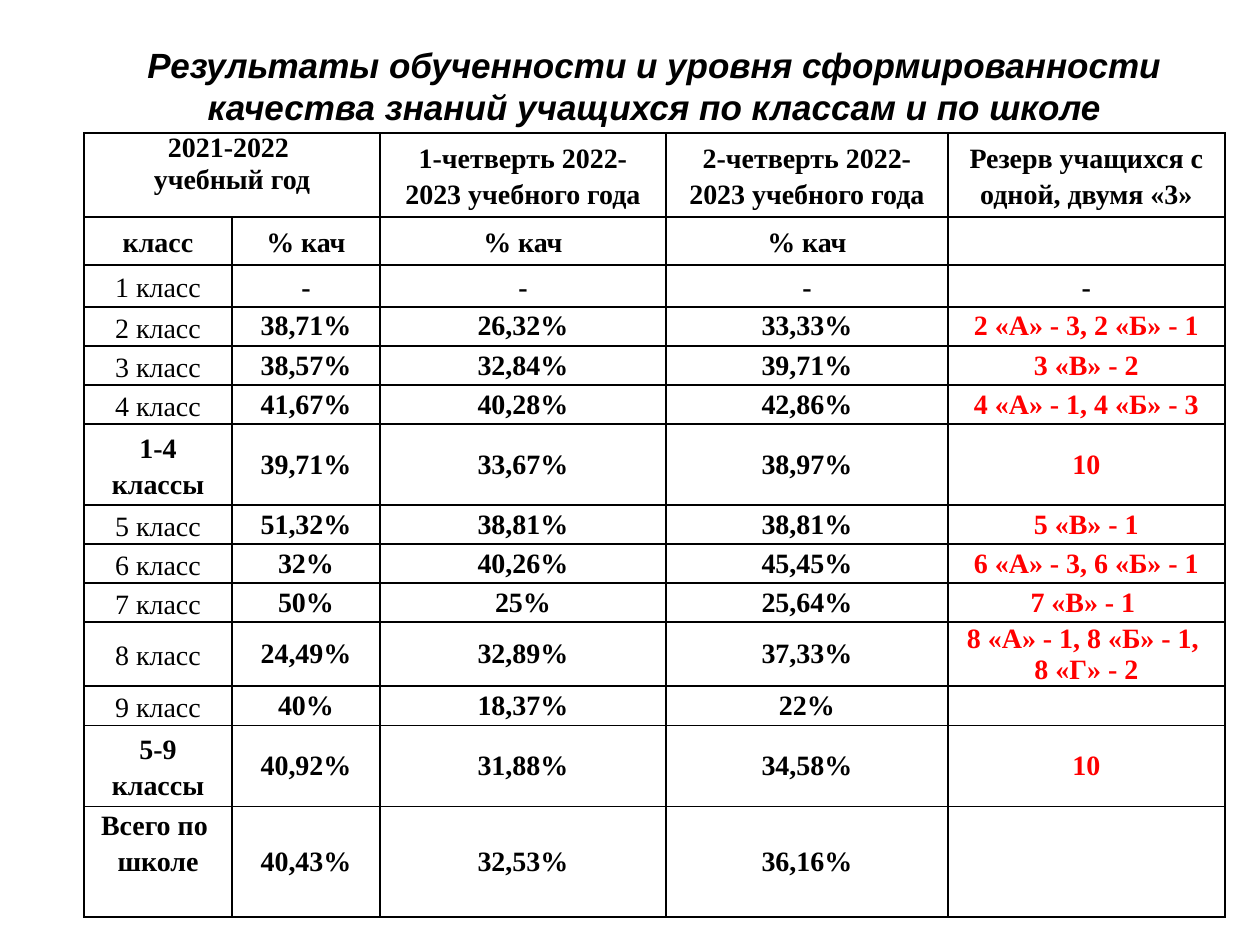
"""Build the slide with quarterly knowledge-quality results by class."""
import pptx
import pptx.util
import pptx.dml.color
import pptx.enum.text
import lxml.etree

TITLE = ("Результаты обученности и уровня сформированности "
         "качества знаний учащихся по классам и по школе")
RESULTS = [
    (84, ["2021-2022 \nучебный год", "", "1-четверть 2022-2023 учебного года",
          "2-четверть 2022-2023 учебного года", "Резерв учащихся с одной, двумя «3»"]),
    (48, ["класс", "% кач", "% кач", "% кач", ""]),
    (42, ["1 класс", "-", "-", "-", "-"]),
    (39, ["2 класс", "38,71%", "26,32%", "33,33%", "2 «А» - 3, 2 «Б» - 1"]),
    (39, ["3 класс", "38,57%", "32,84%", "39,71%", "3 «В» - 2"]),
    (39, ["4 класс", "41,67%", "40,28%", "42,86%", "4 «А» - 1, 4 «Б» - 3"]),
    (81, ["1-4 классы", "39,71%", "33,67%", "38,97%", "10"]),
    (39, ["5 класс", "51,32%", "38,81%", "38,81%", "5 «В» - 1"]),
    (39, ["6 класс", "32%", "40,26%", "45,45%", "6 «А» - 3, 6 «Б» - 1"]),
    (39, ["7 класс", "50%", "25%", "25,64%", "7 «В» - 1 "]),
    (64, ["8 класс", "24,49%", "32,89%", "37,33%", "8 «A» - 1, 8 «Б» - 1, \v8 «Г» - 2"]),
    (39, ["9 класс", "40%", "18,37%", "22%", ""]),
    (81, ["5-9 классы", "40,92%", "31,88%", "34,58%", "10"]),
    (111, ["Всего по \nшколе", "40,43%", "32,53%", "36,16%", ""]),
]
COLUMNS = [148, 148, 286, 282, 277]
LEFT, TITLE_TOP, TABLE_TOP, TITLE_HEIGHT = 84, 37, 133, 97
WIDTH = sum(COLUMNS)
BLACK, RED = "000000", "FF0000"
TITLE_FONT = {"name": "Arial", "size": pptx.util.Pt(20), "bold": True, "italic": True}
CELL_FONT = {"name": "Times New Roman", "size": pptx.util.Pt(16)}
ANCHOR = pptx.enum.text.MSO_ANCHOR
CENTER = pptx.enum.text.PP_ALIGN.CENTER


def px(length):
    return pptx.util.Emu(round(length * 914400 / 126))


def rgb(value):
    return pptx.dml.color.RGBColor.from_string(value)


def assign(target, values):
    for key, value in values.items():
        setattr(target, key, value)


def write(frame, text, font, color=BLACK, spacing=None):
    frame.text = text
    for paragraph in frame.paragraphs:
        assign(paragraph, {"alignment": CENTER, "line_spacing": spacing})
        for run in paragraph.runs:
            assign(run.font, font)
            run.font.color.rgb = rgb(color)


def outline(cell):
    properties = cell._tc.get_or_add_tcPr()
    namespace = "{http://schemas.openxmlformats.org/drawingml/2006/main}"
    for side in ("lnL", "lnR", "lnT", "lnB"):
        line = lxml.etree.SubElement(properties, namespace + side, w="12700")
        fill = lxml.etree.SubElement(line, namespace + "solidFill")
        lxml.etree.SubElement(fill, namespace + "srgbClr", val=BLACK)


def cell_margins(row, column):
    if row == 0 and column > 1:
        sides = (13, 6, 13, 6)
    elif row > 3 and column > 0:
        sides = (1, 1, 1, 0)
    else:
        sides = (9, 0, 9, 0)
    names = ("margin_left", "margin_top", "margin_right", "margin_bottom")
    return {name: px(side) for name, side in zip(names, sides)}


def add_results(slide):
    height = sum(row_height for row_height, _ in RESULTS)
    results = slide.shapes.add_table(len(RESULTS), len(COLUMNS), px(LEFT), px(TABLE_TOP),
                                     px(WIDTH), px(height)).table
    assign(results, {"first_row": False, "horz_banding": False})
    for column, width in enumerate(COLUMNS):
        results.columns[column].width = px(width)
    for row, (row_height, texts) in enumerate(RESULTS):
        results.rows[row].height = px(row_height)
        for column, text in enumerate(texts):
            cell = results.cell(row, column)
            outline(cell)
            cell.fill.background()
            top = row == 0 or "\n" in text
            assign(cell, cell_margins(row, column))
            cell.vertical_anchor = ANCHOR.TOP if top else ANCHOR.MIDDLE
            loose = (row < 3 or column == 0) and (row, column) != (0, 0)
            if text:
                write(cell.text_frame, text,
                      {**CELL_FONT, "bold": not text.endswith(" класс")},
                      RED if column == 4 and row > 2 else BLACK,
                      1.15 if loose else None)
    results.cell(0, 0).merge(results.cell(0, 1))


def main():
    deck = pptx.Presentation()
    assign(deck, {"slide_width": px(1260), "slide_height": px(945)})
    slide = deck.slides.add_slide(deck.slide_layouts[6])
    add_results(slide)
    title = slide.shapes.add_textbox(px(LEFT), px(TITLE_TOP), px(WIDTH), px(TITLE_HEIGHT))
    assign(title.text_frame, {"word_wrap": True,
                              "auto_size": pptx.enum.text.MSO_AUTO_SIZE.SHAPE_TO_FIT_TEXT})
    write(title.text_frame, TITLE, TITLE_FONT)
    deck.save("out.pptx")


if __name__ == "__main__":
    main()
